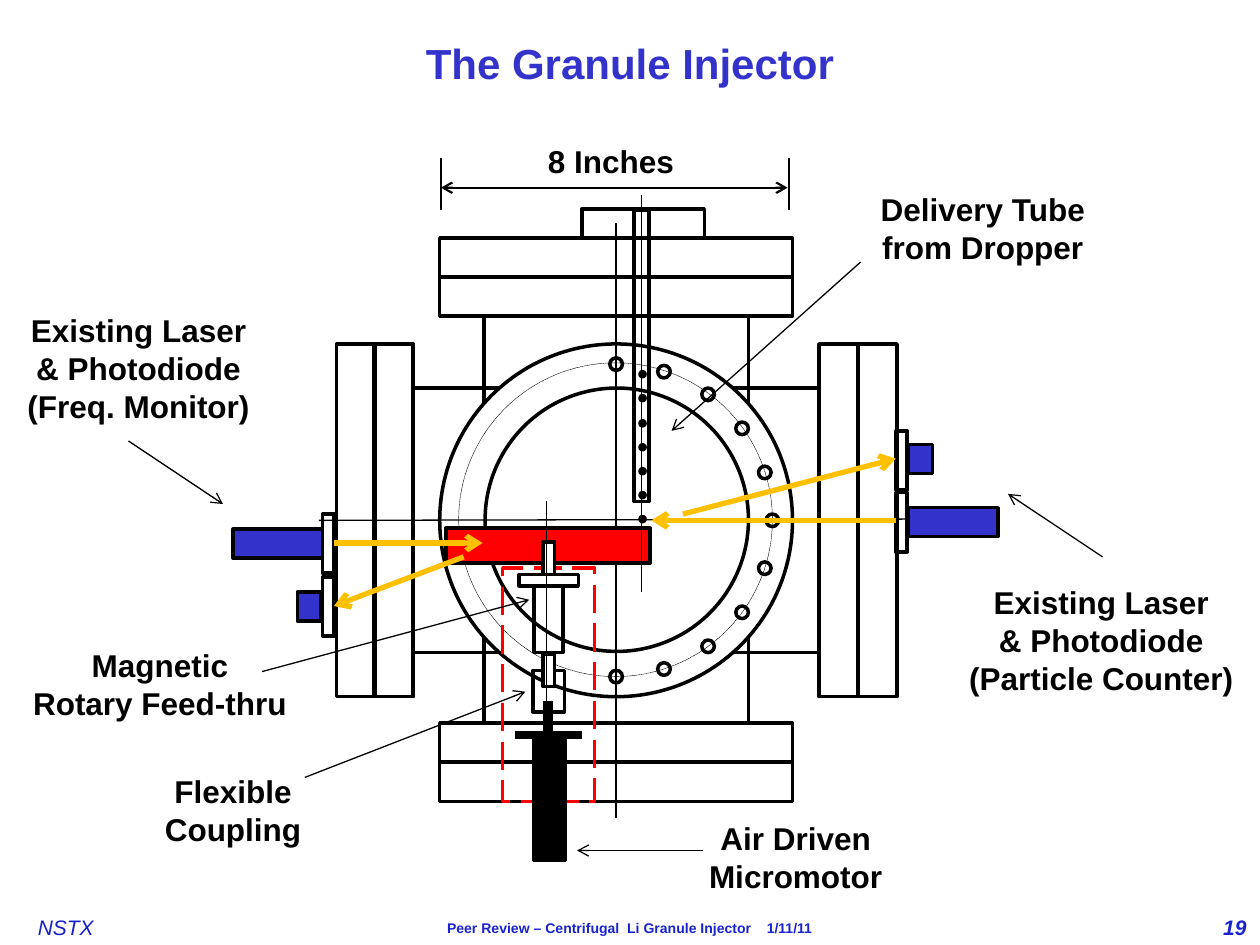
import math
from dataclasses import dataclass
from typing import Optional

import pptx
import pptx.dml.color
import pptx.enum.dml
import pptx.enum.shapes
import pptx.enum.text
import pptx.oxml
import pptx.oxml.ns
import pptx.util

PX = 9144  # EMU per px, 100 px to the inch
FONT = "Arial"
BLACK, WHITE, RED = "000000", "FFFFFF", "FF0000"
BLUE, FOOTER_BLUE, BEAM = "3333CC", "1822CD", "FFC000"
RECT = pptx.enum.shapes.MSO_SHAPE.RECTANGLE
OVAL = pptx.enum.shapes.MSO_SHAPE.OVAL
DASH = pptx.enum.dml.MSO_LINE
ALIGN = pptx.enum.text.PP_ALIGN


@dataclass
class Part:
    left: int
    top: int
    width: int
    height: int
    fill: Optional[str] = None
    line: str = BLACK
    weight: float = 2
    dash: Optional[DASH] = None
    kind: pptx.enum.shapes.MSO_SHAPE = RECT


@dataclass
class Stroke:
    x1: int
    y1: int
    x2: int
    y2: int
    color: str = BLACK
    weight: float = 0.75
    ends: tuple = ()


@dataclass
class Label:
    text: str
    left: int
    top: int
    width: int
    height: int
    size: int = 18
    color: str = BLACK
    bold: bool = True
    italic: bool = False
    align: ALIGN = ALIGN.CENTER
    wrap: bool = False
    inset: bool = True
    middle: bool = False


def rgb(color: str) -> pptx.dml.color.RGBColor:
    return pptx.dml.color.RGBColor.from_string(color)


def draw_part(page, part: Part) -> None:
    shape = page.shapes.add_shape(part.kind, part.left * PX, part.top * PX,
                                  part.width * PX, part.height * PX)
    shape.shadow.inherit = False
    if part.fill:
        shape.fill.solid()
        shape.fill.fore_color.rgb = rgb(part.fill)
    else:
        shape.fill.background()
    shape.line.color.rgb = rgb(part.line)
    shape.line.width = pptx.util.Pt(part.weight)
    if part.dash:
        shape.line.dash_style = part.dash


def draw_stroke(page, stroke: Stroke) -> None:
    line = page.shapes.add_connector(
        pptx.enum.shapes.MSO_CONNECTOR.STRAIGHT,
        stroke.x1 * PX, stroke.y1 * PX, stroke.x2 * PX, stroke.y2 * PX)
    line.line.color.rgb = rgb(stroke.color)
    line.line.width = pptx.util.Pt(stroke.weight)
    outline = line.line._get_or_add_ln()
    for end in stroke.ends:
        arrow = pptx.oxml.parse_xml(
            f'<a:{end} {pptx.oxml.ns.nsdecls("a")} type="arrow"/>')
        outline.append(arrow)
    line._element.spPr.append(pptx.oxml.parse_xml(
        f'<a:effectLst {pptx.oxml.ns.nsdecls("a")}/>'))


def draw_arrow(page, x1: int, y1: int, x2: int, y2: int,
               color: str = BLACK, weight: float = 0.75) -> None:
    draw_stroke(page, Stroke(x1, y1, x2, y2, color, weight, ("tailEnd",)))


def draw_label(page, label: Label) -> None:
    box = page.shapes.add_textbox(label.left * PX, label.top * PX,
                                  label.width * PX, label.height * PX)
    frame = box.text_frame
    frame.word_wrap = label.wrap
    if label.middle:
        frame.vertical_anchor = pptx.enum.text.MSO_ANCHOR.MIDDLE
    else:
        frame.auto_size = pptx.enum.text.MSO_AUTO_SIZE.SHAPE_TO_FIT_TEXT
    if not label.inset:
        frame.margin_left = frame.margin_right = 0
        frame.margin_top = frame.margin_bottom = 0
    frame.text = label.text
    for para in frame.paragraphs:
        para.alignment = label.align
        for span in para.runs:
            span.font.name = FONT
            span.font.size = pptx.util.Pt(label.size)
            span.font.bold = label.bold
            span.font.italic = label.italic
            span.font.color.rgb = rgb(label.color)


def draw_chamber(page) -> None:
    # Four arms, then their paired flanges
    for arm in ((384, 251, 210, 64), (384, 504, 210, 70),
                (328, 308, 57, 210), (593, 308, 57, 210)):
        draw_part(page, Part(*arm))
    for top in (189, 220, 574, 605):
        draw_part(page, Part(349, top, 280, 31))
    for left in (267, 297, 650, 681):
        draw_part(page, Part(left, 273, 31, 280))

    # Front flange with its bolt circle
    draw_part(page, Part(384, 308, 210, 210, WHITE))
    draw_part(page, Part(349, 273, 280, 280, WHITE, kind=OVAL))
    draw_part(page, Part(364, 288, 249, 249, weight=0.25,
                         dash=DASH.SQUARE_DOT, kind=OVAL))
    draw_part(page, Part(385, 308, 209, 209, kind=OVAL))
    for step in range(11):
        angle = math.radians(18 * step)
        draw_part(page, Part(round(484 + 124 * math.sin(angle)),
                             round(408 - 124 * math.cos(angle)),
                             10, 10, kind=OVAL))

    # Centre lines and the width dimension
    draw_stroke(page, Stroke(725, 412, 253, 413))
    draw_stroke(page, Stroke(489, 177, 489, 649))
    for x in (350, 626):
        draw_stroke(page, Stroke(x, 167, x, 125, weight=1.25))
    draw_stroke(page, Stroke(350, 149, 625, 149, weight=1.25,
                             ends=("headEnd", "tailEnd")))
    draw_label(page, Label("8 Inches", 425, 108, 121, 40, align=ALIGN.LEFT))


def draw_particle_counter(page) -> None:
    for top in (391, 342):
        draw_part(page, Part(711, top, 9, 47))
    draw_part(page, Part(721, 403, 71, 23, BLUE))
    draw_part(page, Part(721, 353, 19, 23, BLUE))
    draw_arrow(page, 711, 413, 517, 413, BEAM, 3)
    draw_arrow(page, 542, 408, 711, 364, BEAM, 3)
    draw_label(page, Label("Existing Laser\n& Photodiode\n(Particle Counter)",
                           758, 458, 232, 101))
    draw_arrow(page, 875, 442, 800, 392)


def draw_rotor(page) -> None:
    # Paddle and its dashed housing
    draw_part(page, Part(354, 419, 162, 28, RED))
    draw_part(page, Part(399, 451, 73, 185, line=RED, dash=DASH.LONG_DASH))
    # Coupling and micromotor
    draw_part(page, Part(423, 532, 25, 33))
    draw_stroke(page, Stroke(435, 556, 435, 581, weight=6))
    draw_part(page, Part(424, 583, 25, 100, BLACK))
    draw_stroke(page, Stroke(409, 583, 462, 583, weight=4.5))
    # Feed-through and shaft
    draw_part(page, Part(412, 456, 47, 9))
    draw_part(page, Part(431, 430, 9, 26, WHITE))
    draw_part(page, Part(424, 465, 23, 53))
    draw_part(page, Part(431, 519, 9, 26, WHITE))
    draw_stroke(page, Stroke(434, 398, 434, 681))
    # Callouts
    draw_label(page, Label("Air Driven\nMicromotor", 552, 645, 159, 71))
    draw_arrow(page, 558, 675, 458, 675)
    draw_label(page, Label("Magnetic\nRotary Feed-thru", 15, 508, 224, 71))
    draw_arrow(page, 208, 533, 420, 476)
    draw_label(page, Label("Flexible\nCoupling", 120, 608, 130, 71))
    draw_arrow(page, 242, 617, 417, 549)


def draw_frequency_monitor(page) -> None:
    for top in (408, 458):
        draw_part(page, Part(256, top, 9, 47))
    draw_part(page, Part(185, 420, 71, 23, BLUE))
    draw_part(page, Part(236, 470, 19, 23, BLUE))
    draw_arrow(page, 265, 431, 383, 431, BEAM, 3)
    draw_arrow(page, 368, 442, 265, 481, BEAM, 3)
    draw_label(page, Label("Existing Laser\n& Photodiode\n(Freq. Monitor)",
                           11, 242, 198, 101))
    draw_arrow(page, 102, 350, 177, 400)


def draw_delivery_tube(page) -> None:
    draw_part(page, Part(503, 167, 12, 231))
    for granule in range(7):
        draw_part(page, Part(508, round(295 + 19.25 * granule), 4, 4,
                             BLACK, kind=OVAL))
    draw_stroke(page, Stroke(509, 155, 509, 470))
    draw_part(page, Part(462, 166, 97, 23))
    draw_label(page, Label("Delivery Tube\nfrom Dropper", 688, 146, 184, 71))
    draw_arrow(page, 683, 208, 533, 342)


def main() -> None:
    deck = pptx.Presentation()
    deck.slide_width, deck.slide_height = 1000 * PX, 750 * PX
    page = deck.slides.add_slide(deck.slide_layouts[6])

    # Footer and title
    draw_label(page, Label("NSTX", 30, 726, 59, 20, 12, "171FC7", False, True,
                           ALIGN.LEFT, wrap=True, inset=False))
    draw_label(page, Label(
        "Peer Review – Centrifugal  Li Granule Injector    1/11/11",
        200, 725, 600, 24, 8, FOOTER_BLUE, wrap=True))
    draw_label(page, Label("The Granule Injector", 0, 0, 1000, 100, 24, BLUE,
                           wrap=True, middle=True))

    draw_chamber(page)
    draw_particle_counter(page)
    draw_rotor(page)
    draw_frequency_monitor(page)
    draw_delivery_tube(page)
    draw_label(page, Label("19", 961, 721, 39, 30, 12, FOOTER_BLUE,
                           italic=True, align=ALIGN.LEFT))
    deck.save("out.pptx")


if __name__ == "__main__":
    main()
